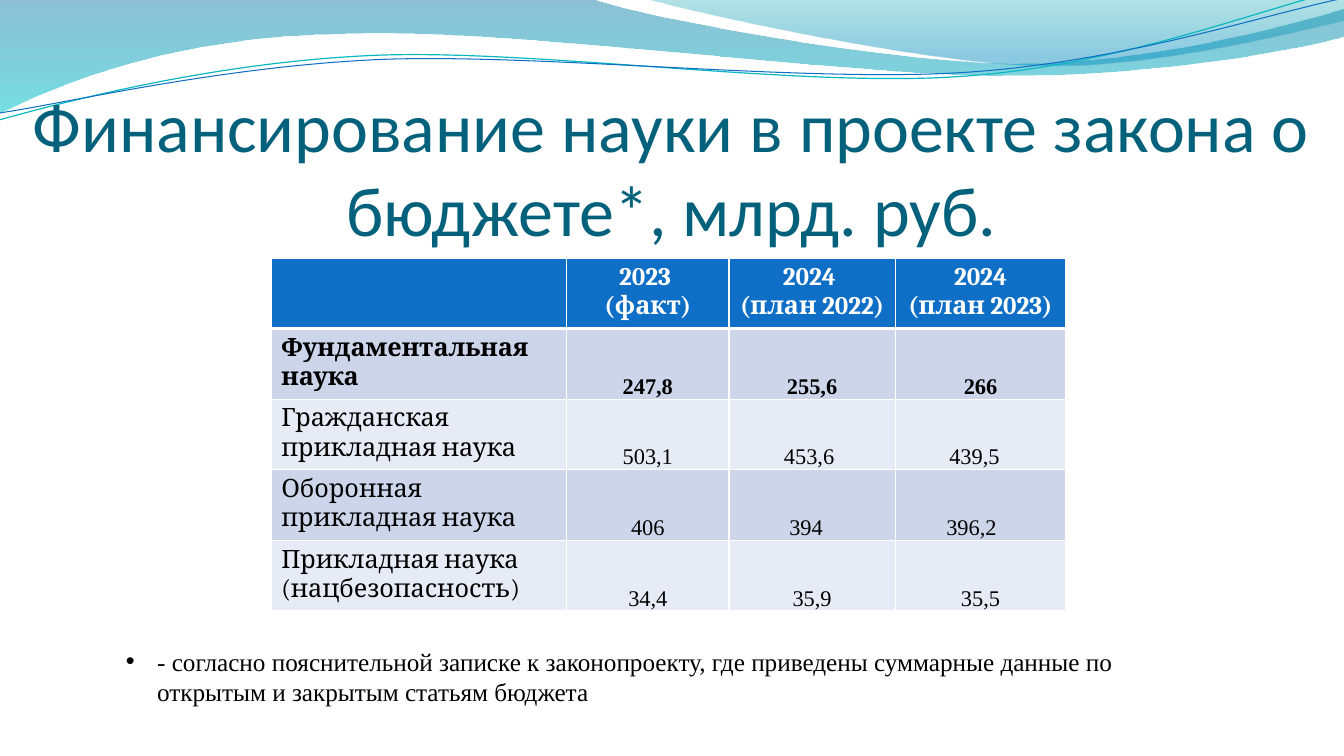
from lxml import etree
from pptx import Presentation
from pptx.dml.color import RGBColor
from pptx.enum.text import MSO_ANCHOR, MSO_AUTO_SIZE, PP_ALIGN
from pptx.oxml.ns import qn
from pptx.util import Inches, Pt

CENTER, LEFT = PP_ALIGN.CENTER, PP_ALIGN.LEFT
TOP, BOTTOM = MSO_ANCHOR.TOP, MSO_ANCHOR.BOTTOM
GROW = MSO_AUTO_SIZE.SHAPE_TO_FIT_TEXT

# Content
TITLE = "Финансирование науки в проекте закона о бюджете*, млрд. руб."
NOTE = ("- согласно пояснительной записке к законопроекту, где приведены "
        "суммарные данные по открытым и закрытым статьям бюджета")
ROWS = [
    ("", "2023 \n(факт)", "2024 \n(план 2022)", "2024\n(план 2023)"),
    ("Фундаментальная наука", "247,8", "255,6", "266"),
    ("Гражданская прикладная наука", "503,1", "453,6", "439,5"),
    ("Оборонная прикладная наука", "406", "394", "396,2"),
    ("Прикладная наука (нацбезопасность)", "34,4", "35,9", "35,5"),
]
COLUMN_WIDTHS = (2.93, 1.61, 1.65, 1.69)
ROW_HEIGHTS = (0, 0.41, 0.41, 0.35, 0.35)  # rows grow to fit their text
TABLE_HEIGHT = 3.5
RIGHT_INSETS = {"453,6": 0.06, "394": 0.12, "439,5": 0.12, "396,2": 0.18}

# Waves: a tuple of two numbers is a line end, of six numbers a Bezier curve
# Gradient stops are position, colour and opacity in percent
BANDS = [
    ((0, 0), [(5.87, -0.01), (6.34, 0.17, 8.85, 0.63, 10.11, 0.63),
              (11.38, 0.63, 12.78, 0.26, 13.33, 0.09), (13.35, 0.36),
              (13.11, 0.44, 11.6, 0.76, 9.94, 0.75),
              (8.29, 0.75, 5.09, 0.28, 3.43, 0.34),
              (1.72, 0.36, 0.61, 0.83, -0.01, 1.13)],
     [(0, "0074A1", 45), (1, "00C6CF", 55)]),
    ((6.39, -0.01), [(6.79, 0.11, 9.09, 0.62, 10.25, 0.65),
                     (11.41, 0.69, 12.82, 0.32, 13.33, 0.21), (13.33, 0)],
     [(0, "00A1A9", 30), (0.8, "008BBF", 45)]),
]
STRANDS = [
    ((-0.01, 1.19), [(0.64, 1.01, 2.11, 0.62, 3.69, 0.55),
                     (5.27, 0.48, 7.9, 0.87, 9.5, 0.76),
                     (11.1, 0.66, 12.52, 0.08, 13.31, -0.1)], "0AB8BF", 0.85),
    ((0, 1.12), [(0.63, 1.03, 2.18, 0.66, 3.78, 0.59),
                 (5.37, 0.53, 7.96, 0.82, 9.55, 0.72),
                 (11.15, 0.62, 12.55, 0.14, 13.34, -0.02)], "0F6FC6", 0.75),
]


def color(value):
    return RGBColor.from_string(value)


def add_wave(page, start, segments, close):
    points = [(Inches(x), Inches(y)) for segment in segments
              for x, y in zip(segment[::2], segment[1::2])]
    builder = page.shapes.build_freeform(Inches(start[0]), Inches(start[1]))
    builder.add_line_segments(points, close=close)
    wave = builder.convert_to_shape()
    wave.shadow.inherit = False

    # Join the three points of each curve into one Bezier segment
    steps = iter(list(wave._element.spPr.iter(qn("a:lnTo"))))
    for segment in segments:
        group = [next(steps) for _ in range(len(segment) // 2)]
        if len(group) == 3:
            curve = etree.Element(qn("a:cubicBezTo"))
            group[0].addprevious(curve)
            for step in group:
                curve.append(step[0])
                step.getparent().remove(step)
    return wave


def add_band(page, start, segments, stops):
    band = add_wave(page, start, segments, True)
    band.line.fill.background()
    band.fill.gradient()
    band.fill.gradient_angle = 270
    for stop, (position, value, _) in zip(band.fill.gradient_stops, stops):
        stop.position = position
        stop.color.rgb = color(value)
    for tint, (_, _, opacity) in zip(band._element.spPr.iter(qn("a:srgbClr")), stops):
        etree.SubElement(tint, qn("a:alpha"), val=str(opacity * 1000))


def add_strand(page, start, segments, value, width):
    strand = add_wave(page, start, segments, False)
    strand.fill.background()
    strand.line.color.rgb = color(value)
    strand.line.width = Pt(width)


def write(frame, text, font, size, value, align, bold=False):
    frame.text = text
    for para in frame.paragraphs:
        para.alignment = align
        for span in para.runs:
            span.font.name = font
            span.font.size = Pt(size)
            span.font.bold = bold
            span.font.color.rgb = color(value)


def add_text(page, left, top, width, height):
    box = page.shapes.add_textbox(Inches(left), Inches(top), Inches(width), Inches(height))
    box.text_frame.word_wrap = True
    return box.text_frame


def set_borders(cell, widths):
    properties = cell._tc.get_or_add_tcPr()
    for index, (side, width) in enumerate(zip("LRTB", widths)):
        border = etree.Element(qn("a:ln" + side), w=str(Pt(width)))
        fill = etree.SubElement(border, qn("a:solidFill"))
        etree.SubElement(fill, qn("a:srgbClr"), val="FFFFFF")
        properties.insert(index, border)


def style_cell(cell, text, row, column):
    header, number = row == 0, row > 0 and column > 0
    fill = "0F6FC6" if header else ("CCD5EA" if row % 2 else "E7EBF5")
    cell.fill.solid()
    cell.fill.fore_color.rgb = color(fill)
    write(cell.text_frame, text, "Times New Roman" if number else "Cambria",
          16 if number else 18, "FFFFFF" if header else "000000",
          CENTER if header or number else LEFT, row < 2)
    cell.vertical_anchor = BOTTOM if number else TOP
    if number:
        cell.margin_left = cell.margin_top = Inches(0.01)
        cell.margin_right = Inches(0.01 + RIGHT_INSETS.get(text, 0))
        cell.margin_bottom = 0
    set_borders(cell, (1, 1, 3 if row == 1 else 1, 3 if header else 1))


def main():
    deck = Presentation()
    deck.slide_width, deck.slide_height = Inches(13.33), Inches(7.5)
    page = deck.slides.add_slide(deck.slide_layouts[6])

    # Waves along the top
    for band in BANDS:
        add_band(page, *band)
    for strand in STRANDS:
        add_strand(page, *strand)

    # Title
    title = add_text(page, 0.28, 0.63, 12.76, 1.86)
    title.margin_left = title.margin_right = title.margin_bottom = 0
    title.vertical_anchor = BOTTOM
    write(title, TITLE, "Calibri", 50, "04617B", CENTER)

    # Funding table
    holder = page.shapes.add_table(
        len(ROWS), len(COLUMN_WIDTHS), Inches(2.69), Inches(2.56),
        Inches(sum(COLUMN_WIDTHS)), Inches(TABLE_HEIGHT))
    table = holder.table
    for column, width in zip(table.columns, COLUMN_WIDTHS):
        column.width = Inches(width)
    for row, texts in enumerate(ROWS):
        table.rows[row].height = Inches(ROW_HEIGHTS[row])
        for column, text in enumerate(texts):
            style_cell(table.cell(row, column), text, row, column)
    holder.height = Inches(TABLE_HEIGHT)

    # Footnote with a hanging bullet
    note = add_text(page, 1.15, 6.36, 10.95, 0.71)
    note.auto_size = GROW
    write(note, NOTE, "Times New Roman", 18, "000000", LEFT)
    properties = note.paragraphs[0]._p.get_or_add_pPr()
    properties.set("marL", str(Inches(0.31)))
    properties.set("indent", str(-Inches(0.31)))
    etree.SubElement(properties, qn("a:buFont"), typeface="Arial")
    etree.SubElement(properties, qn("a:buChar"), char="•")

    deck.save("out.pptx")


if __name__ == "__main__":
    main()
